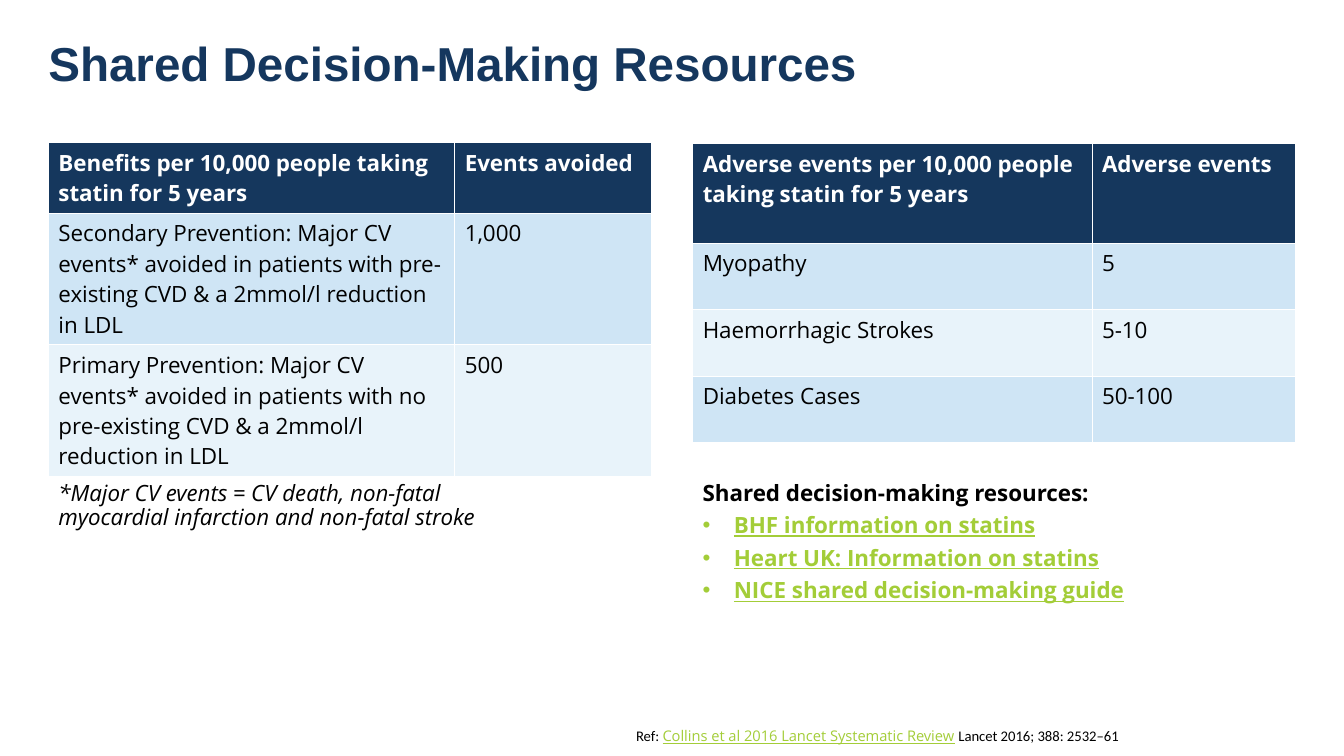
from dataclasses import dataclass

from lxml import etree
from pptx import Presentation
from pptx import util as u
from pptx.dml.color import RGBColor
from pptx.enum import text
from pptx.oxml import parse_xml
from pptx.oxml.ns import nsdecls, qn


@dataclass(frozen=True)
class Theme:
    navy: str = "15375E"
    header: str = "15375D"
    bands: tuple = ("CFE5F5", "E8F3FA")
    white: str = "FFFFFF"
    black: str = "000000"
    link: str = "A3CD38"
    heading: str = "Arial"
    body: str = "Open Sans"
    reference: str = "Calibri"
    title_size: float = 34
    body_size: float = 16
    reference_size: float = 10.5


class SlideBuilder:
    def __init__(self, page, theme):
        self.page = page
        self.theme = theme

    def apply(self, target, values):
        for name, value in values.items():
            setattr(target, name, value)

    def add_span(self, para, words, color=None, **formats):
        span = para.add_run()
        span.text = words
        values = {"name": self.theme.body, "size": u.Pt(self.theme.body_size)}
        self.apply(span.font, values | formats)
        span.font.color.rgb = RGBColor.from_string(color or self.theme.black)

    def add_bullet(self, para, indent=0.31):
        properties = para._p.get_or_add_pPr()
        properties.set("marL", str(u.Inches(indent)))
        properties.set("indent", str(u.Inches(-indent)))
        etree.SubElement(properties, qn("a:buFont")).set("typeface", "Arial")
        etree.SubElement(properties, qn("a:buChar")).set("char", "•")

    def add_text(self, place, paragraphs, inset=None, fit=text.MSO_AUTO_SIZE.SHAPE_TO_FIT_TEXT,
                 anchor=text.MSO_ANCHOR.TOP, bulleted=False, space_after=0):
        box = self.page.shapes.add_textbox(*map(u.Inches, place))
        frame = box.text_frame
        self.apply(frame, {"word_wrap": True, "auto_size": fit, "vertical_anchor": anchor})
        if inset is not None:
            margins = ("margin_left", "margin_top", "margin_right", "margin_bottom")
            self.apply(frame, dict.fromkeys(margins, u.Inches(inset)))
        for index, spans in enumerate(paragraphs):
            para = frame.add_paragraph() if index else frame.paragraphs[0]
            self.apply(para, {"line_spacing": 0.9, "space_after": u.Pt(space_after)})
            if bulleted and index:
                self.add_bullet(para)
            for words, formats in spans:
                self.add_span(para, words, **formats)

    def add_borders(self, cell):
        properties = cell._tc.get_or_add_tcPr()
        for side in ("lnL", "lnR", "lnT", "lnB"):
            properties.append(parse_xml(
                f'<a:{side} {nsdecls("a")} w="{u.Pt(0.5)}"><a:solidFill>'
                f'<a:srgbClr val="{self.theme.white}"/></a:solidFill></a:{side}>'))

    def add_table(self, place, widths, heights, rows):
        frame = self.page.shapes.add_table(len(rows), len(widths), *map(u.Inches, place))
        table = frame.table
        for column, width in zip(table.columns, widths):
            column.width = u.Inches(width)
        for index, (height, values) in enumerate(zip(heights, rows)):
            table.rows[index].height = u.Inches(height)
            fill = self.theme.bands[(index - 1) % 2] if index else self.theme.header
            color = self.theme.black if index else self.theme.white
            for cell, value in zip(table.rows[index].cells, values):
                self.add_borders(cell)
                cell.fill.solid()
                cell.fill.fore_color.rgb = RGBColor.from_string(fill)
                for order, line in enumerate(value.split("\n")):
                    frame = cell.text_frame
                    para = frame.add_paragraph() if order else frame.paragraphs[0]
                    self.add_span(para, line, color, bold=index == 0)


def main():
    deck = Presentation()
    deck.slide_width, deck.slide_height = u.Inches(13.33), u.Inches(7.5)
    theme = Theme()
    builder = SlideBuilder(deck.slides.add_slide(deck.slide_layouts[6]), theme)
    left, right, notes_top = 0.48, 6.87, 4.73

    title = {"name": theme.heading, "size": u.Pt(theme.title_size), "bold": True,
             "color": theme.navy}
    builder.add_text((left, 0.42, 12.36, 0.48), [[("Shared Decision-Making Resources", title)]],
                     inset=0, fit=text.MSO_AUTO_SIZE.NONE, anchor=text.MSO_ANCHOR.MIDDLE)

    builder.add_table((left, 1.41, 5.98, 2.34), (4.03, 1.95), (0.49, 0.88, 0.97), [
        ("Benefits per 10,000 people taking statin for 5 years", "Events avoided"),
        ("Secondary Prevention: Major CV\nevents* avoided in patients with pre-existing CVD "
         "& a 2mmol/l reduction in LDL", "1,000"),
        ("Primary Prevention: Major CV events* avoided in patients with no pre-existing CVD "
         "& a 2mmol/l reduction in LDL", "500"),
    ])
    builder.add_table((right, 1.42, 5.98, 2.97), (3.96, 2.02), (0.99, 0.66, 0.66, 0.66), [
        ("Adverse events per 10,000 people taking statin for 5 years", "Adverse events"),
        ("Myopathy", "5"),
        ("Haemorrhagic Strokes", "5-10"),
        ("Diabetes Cases", "50-100"),
    ])

    builder.add_text((left, notes_top, 4.68, 0.64), [[
        ("*Major CV events = CV death, non-fatal myocardial infarction and non-fatal stroke",
         {"italic": True})]])

    link = {"color": theme.link, "underline": True}
    resources = ("BHF information on statins", "Heart UK: Information on statins",
                 "NICE shared decision-making guide")
    builder.add_text(
        (right, notes_top, 5.15, 1.43),
        [[("Shared decision-making resources:", {"bold": True})]]
        + [[(resource, link | {"bold": True})] for resource in resources],
        bulleted=True, space_after=6)

    small = {"size": u.Pt(theme.reference_size)}
    plain = small | {"name": theme.reference}
    builder.add_text((6.21, 7.18, 5.38, 0.28), [[
        ("Ref: ", plain),
        ("Collins et al 2016 Lancet Systematic Review", small | link),
        (" ", small),
        ("Lancet 2016; 388: 2532–61", plain)]])

    deck.save("out.pptx")


if __name__ == "__main__":
    main()
